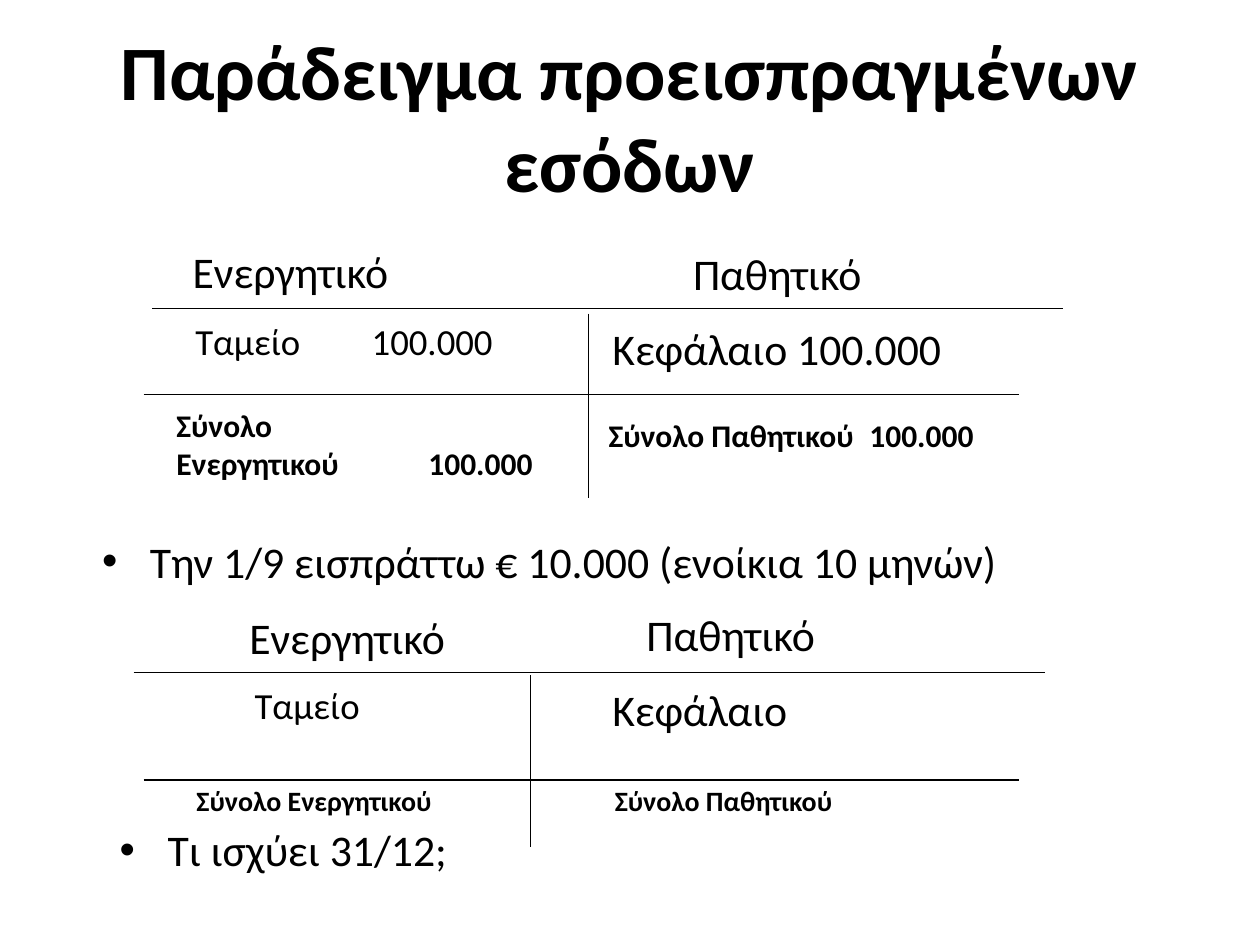
from lxml import etree
from pptx import Presentation, util as u
from pptx.dml.color import RGBColor
from pptx.enum import shapes, text
from pptx.oxml import ns

BLACK = RGBColor(0, 0, 0)
WHITE = RGBColor(255, 255, 255)
FONT = "Calibri"
COLUMNS, ROWS = 100, 75

TITLE = {"size": u.Pt(44), "bold": True}
LARGE = {"size": u.Pt(25), "bold": False}
ENTRY = {"size": u.Pt(21), "bold": False}
TOTAL = {"size": u.Pt(18), "bold": True}
SMALL_TOTAL = {"size": u.Pt(16), "bold": True}
FRAME = {"margin_left": 0, "margin_right": 0, "margin_top": 0, "margin_bottom": 0,
         "word_wrap": True, "auto_size": text.MSO_AUTO_SIZE.NONE}


def apply(target, values):
    for name, value in values.items():
        setattr(target, name, value)


class LedgerSlide:
    def __init__(self, deck):
        self.column = deck.slide_width / COLUMNS
        self.row = deck.slide_height / ROWS
        self.page = deck.slides.add_slide(deck.slide_layouts[3])
        self.page.background.fill.solid()
        self.page.background.fill.fore_color.rgb = WHITE

    def place(self, left, top, width, height):
        return (u.Emu(round(left * self.column)), u.Emu(round(top * self.row)),
                u.Emu(round(width * self.column)), u.Emu(round(height * self.row)))

    def fill_text(self, box, lines, style, anchor=text.MSO_ANCHOR.TOP,
                  align=text.PP_ALIGN.LEFT, tab=None, hanging=None):
        frame = box.text_frame
        apply(frame, {**FRAME, "vertical_anchor": anchor})
        for index, line in enumerate(lines):
            para = frame.add_paragraph() if index else frame.paragraphs[0]
            apply(para, {"alignment": align, "space_before": u.Pt(0)})
            properties = para._p.get_or_add_pPr()
            if hanging:
                properties.set("marL", str(hanging))
                properties.set("indent", str(-hanging))
            if tab:
                stops = etree.SubElement(properties, ns.qn("a:tabLst"))
                etree.SubElement(stops, ns.qn("a:tab"), pos=str(tab), algn="l")
            span = para.add_run()
            span.text = line
            apply(span.font, {"name": FONT, **style})
            span.font.color.rgb = BLACK

    def placeholder(self, index, area, line, style, **options):
        box = self.page.placeholders[index]
        apply(box, dict(zip(("left", "top", "width", "height"), self.place(*area))))
        self.fill_text(box, [line], style, **options)

    def title(self, area, line):
        self.placeholder(0, area, line, TITLE, anchor=text.MSO_ANCHOR.MIDDLE,
                         align=text.PP_ALIGN.CENTER)

    def bullet(self, index, area, line):
        self.placeholder(index, area, line, LARGE, hanging=u.Inches(0.38))

    def label(self, area, lines, style, tab=None):
        box = self.page.shapes.add_textbox(*self.place(*area))
        self.fill_text(box, lines, style, tab=tab)

    def rule(self, left, top, width=0, height=0):
        x, y, across, down = self.place(left, top, width, height)
        line = self.page.shapes.add_connector(
            shapes.MSO_CONNECTOR.STRAIGHT, x, y, x + across, y + down)
        line.line.color.rgb = BLACK
        line.line.width = u.Pt(0.75)
        etree.SubElement(line._element.spPr, ns.qn("a:effectLst"))

    def ledger(self, header, totals, divider):
        self.rule(*header, width=72.3)
        self.rule(11.4, totals, width=69.5)
        left, top, bottom = divider
        self.rule(left, top, height=bottom - top)


def main():
    deck = Presentation()
    deck.slide_width, deck.slide_height = u.Inches(10), u.Inches(7.5)
    slide = LedgerSlide(deck)

    slide.title((5.2, 1.8, 89.6, 14.8), "Παράδειγμα προεισπραγμένων εσόδων")
    slide.bullet(1, (8.1, 42.4, 86, 4.2), "Την 1/9 εισπράττω € 10.000 (ενοίκια 10 μηνών)")
    slide.bullet(2, (9.5, 65.3, 27.6, 4.2), "Τι ισχύει 31/12;")

    slide.ledger(header=(12.1, 24.5), totals=31.3, divider=(46.7, 24.9, 39.5))
    slide.ledger(header=(10.6, 53.4), totals=61.9, divider=(42.1, 53.6, 67.2))

    for area, line, style in (
        ((15.3, 19.4, 19.4, 4.2), "Ενεργητικό", LARGE),
        ((55, 19.6, 16.8, 4.2), "Παθητικό", LARGE),
        ((15.5, 25.3, 10.7, 3.5), "Ταμείο", ENTRY),
        ((29.5, 25.3, 12.4, 3.5), "100.000", ENTRY),
        ((48.6, 25.5, 32.5, 4.2), "Κεφάλαιο 100.000", LARGE),
        ((19.8, 48.5, 19.4, 4.2), "Ενεργητικό", LARGE),
        ((51.3, 48.2, 16.8, 4.2), "Παθητικό", LARGE),
        ((20.2, 54.2, 10.8, 3.5), "Ταμείο", ENTRY),
        ((48.6, 54.2, 17.4, 4.2), "Κεφάλαιο", LARGE),
        ((15.6, 62.2, 23.4, 2.7), "Σύνολο Ενεργητικού", SMALL_TOTAL),
        ((48.8, 62.2, 21.6, 2.7), "Σύνολο Παθητικού", SMALL_TOTAL),
    ):
        slide.label(area, [line], style)

    slide.label((14, 32.2, 28.5, 6.1), ["Σύνολο", "Ενεργητικού\t100.000"], TOTAL,
                tab=u.Inches(2))
    slide.label((48.3, 33, 34.2, 3), ["Σύνολο Παθητικού\t100.000"], TOTAL,
                tab=u.Inches(2.07))

    deck.save("out.pptx")


if __name__ == "__main__":
    main()
